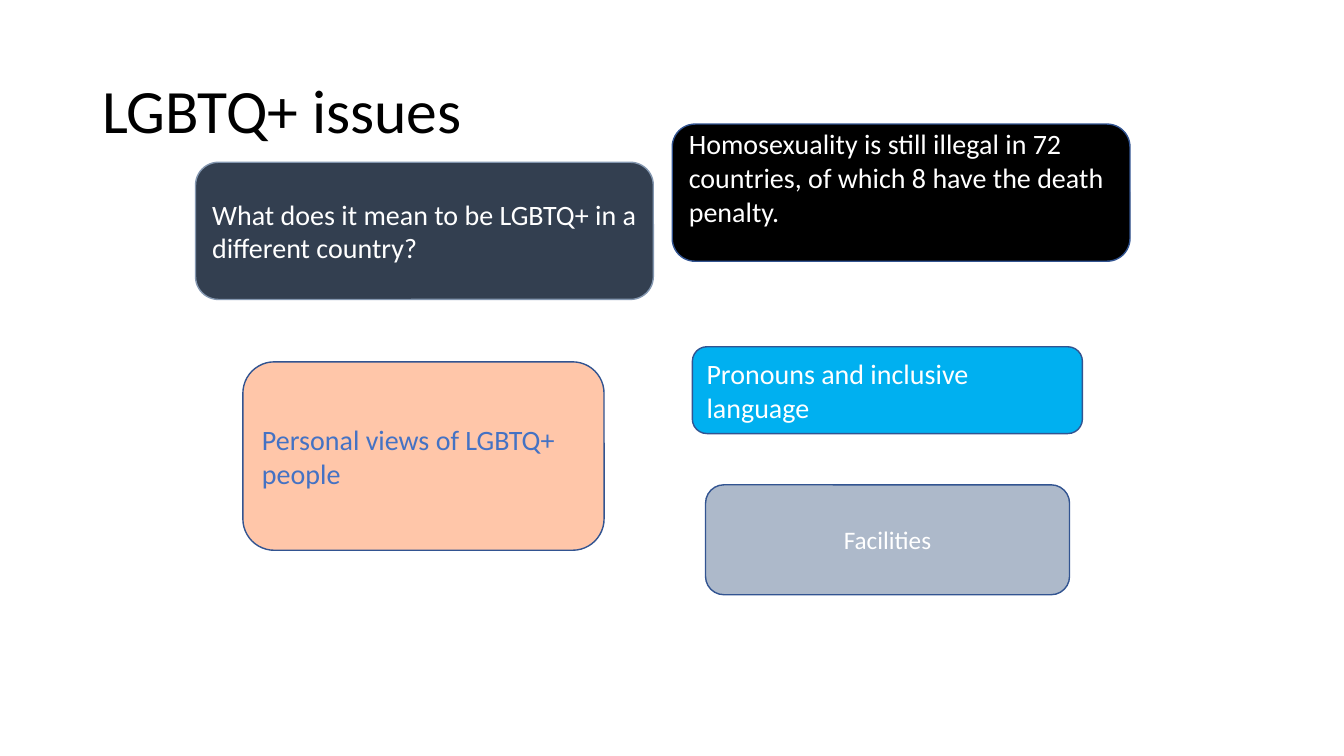
from pptx import Presentation
from pptx.dml.color import RGBColor
from pptx.enum.shapes import MSO_SHAPE as Shape
from pptx.enum.text import MSO_ANCHOR as Anchor, PP_ALIGN as Align
from pptx.util import Pt


def color(code):
    return RGBColor.from_string(code)


def style(frame, text, size, ink, align):
    frame.text = text
    frame.word_wrap = True
    frame.vertical_anchor = Anchor.MIDDLE
    para = frame.paragraphs[0]
    para.alignment = align
    font = para.runs[0].font
    font.name = "Calibri"
    font.size = Pt(size)
    font.color.rgb = color(ink)


deck = Presentation()
deck.slide_width = Pt(960)
deck.slide_height = Pt(540)
slide = deck.slides.add_slide(deck.slide_layouts[5])

title = slide.shapes.title
title.left, title.top = Pt(66), Pt(28.8)
title.width, title.height = Pt(828), Pt(104.4)
style(title.text_frame, "LGBTQ+ issues", 44, "000000", Align.LEFT)
title.text_frame.paragraphs[0].line_spacing = 0.9

cards = [
    ("Homosexuality is still illegal in 72 countries, of which 8 have the death penalty.",
     480.2, 88.6, 327, 98, "000000", "325491", 20, "FFFFFF", Align.LEFT, 25.6),
    ("Personal views of LGBTQ+ people",
     173.5, 258.5, 258, 134.6, "FFC6A9", "325491", 20, "4472C4", Align.LEFT, 3.6),
    ("Pronouns and inclusive language",
     494.6, 247.7, 278.6, 62, "00B0F0", "325491", 20, "FFFFFF", Align.LEFT, 3.6),
    ("Facilities",
     504, 346.3, 260, 78.5, "ADB9CA", "325491", 18, "FFFFFF", Align.CENTER, 3.6),
    ("What does it mean to be LGBTQ+ in a different country?",
     139.7, 115.9, 327, 98, "333F50", "8497B0", 20, "FFFFFF", Align.LEFT, 3.6),
]
for text, left, top, width, height, fill, edge, size, ink, align, pad in cards:
    card = slide.shapes.add_shape(
        Shape.ROUNDED_RECTANGLE, Pt(left), Pt(top), Pt(width), Pt(height))
    card.shadow.inherit = False
    card.fill.solid()
    card.fill.fore_color.rgb = color(fill)
    card.line.color.rgb = color(edge)
    card.line.width = Pt(1)
    style(card.text_frame, text, size, ink, align)
    card.text_frame.margin_bottom = Pt(pad)

deck.save("out.pptx")
